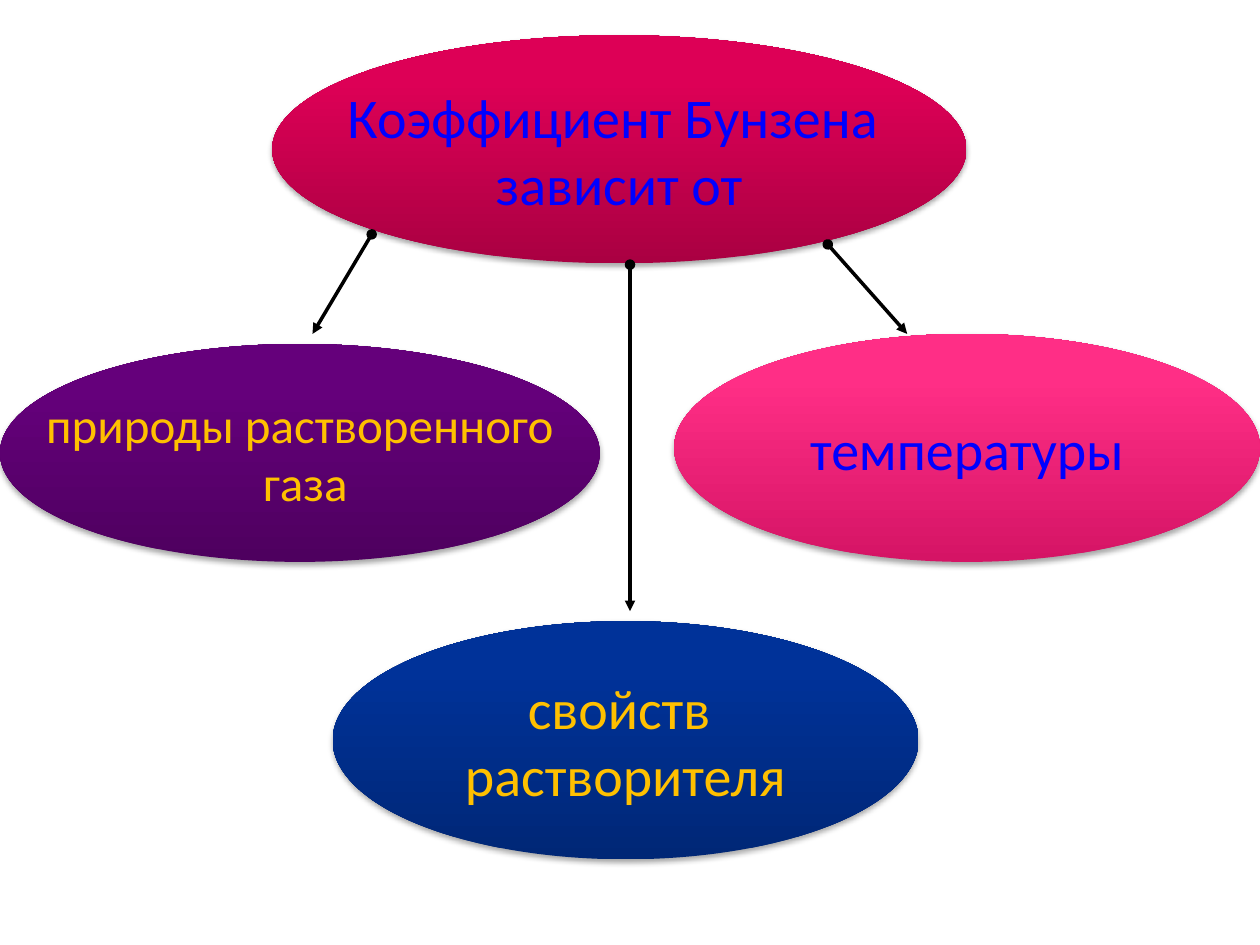
from lxml.etree import SubElement
from pptx import Presentation
from pptx.dml.color import RGBColor as Rgb
from pptx.enum.shapes import MSO_CONNECTOR as Connector, MSO_SHAPE as Shape
from pptx.enum.text import MSO_ANCHOR as Anchor, PP_ALIGN as Align
from pptx.oxml.ns import qn
from pptx.util import Inches, Pt

COLORS = {"blue": "0000FF", "gold": "FFC000", "black": "000000"}
GRADIENTS = {  # from bottom to top, at 0, 80 and 100 percent
    "crimson": ("AA0042", "DD0056", "DE0057"),
    "pink": ("D51465", "FF2E86", "FF3087"),
    "navy": ("002776", "003299", "00339A"),
    "purple": ("4E005F", "65007B", "65007C"),
}
STOPS = (0, 80, 100)

# box (left, top, width, height), gradient, text colour, text size, lines
ELLIPSES = [
    ((2.16, 0.28, 5.51, 1.81), "crimson", "blue", 32, ["Коэффициент Бунзена ", "зависит от"]),
    ((5.35, 2.65, 4.65, 1.81), "pink", "blue", 32, ["температуры"]),
    ((2.64, 4.93, 4.65, 1.89), "navy", "gold", 32, ["свойств ", "растворителя"]),
    ((0, 2.73, 4.76, 1.73), "purple", "gold", 28, ["природы растворенного", " газа"]),
]
ARROWS = [
    ((2.95, 1.86), (2.48, 2.65)),
    ((6.57, 1.94), (7.2, 2.65)),
    ((5, 2.1), (5, 4.85)),
]


def add_color(parent, color):
    return SubElement(parent, qn("a:srgbClr"), val=color)


def fill_gradient(shape, colors):
    shape.fill.gradient()
    shape.fill.gradient_angle = 90
    stops = shape._element.spPr.find(".//" + qn("a:gsLst"))
    for stop in list(stops):
        stops.remove(stop)
    for percent, color in zip(STOPS, colors):
        add_color(SubElement(stops, qn("a:gs"), pos=str(percent * 1000)), color)


def add_soft_shadow(shape):
    shape.shadow.inherit = False
    effects = shape._element.spPr.find(qn("a:effectLst"))
    shadow = SubElement(effects, qn("a:outerShdw"), blurRad=str(Pt(3.1)),
                        dist=str(Pt(1.8)), dir="5400000", rotWithShape="0")
    SubElement(add_color(shadow, COLORS["black"]), qn("a:alpha"), val="35000")


def add_ellipse(page, box, gradient, color, size, lines):
    ellipse = page.shapes.add_shape(Shape.OVAL, *map(Inches, box))
    fill_gradient(ellipse, GRADIENTS[gradient])
    ellipse.line.fill.background()
    add_soft_shadow(ellipse)
    frame = ellipse.text_frame
    frame.word_wrap = False
    frame.vertical_anchor = Anchor.MIDDLE
    frame.text = "\n".join(lines)
    for para in frame.paragraphs:
        para.alignment = Align.CENTER
        indent = Inches(0.38)
        properties = para._p.get_or_add_pPr()
        properties.set("marL", str(indent))
        properties.set("indent", str(-indent))
        for span in para.runs:
            span.font.name = "Calibri"
            span.font.size = Pt(size)
            span.font.color.rgb = Rgb.from_string(COLORS[color])


def add_arrow(page, start, end):
    arrow = page.shapes.add_connector(Connector.STRAIGHT, *map(Inches, start + end))
    arrow.line.width = Pt(2)
    arrow.line.color.rgb = Rgb.from_string(COLORS["black"])
    line = arrow.line._get_or_add_ln()
    SubElement(line, qn("a:headEnd"), type="oval")
    SubElement(line, qn("a:tailEnd"), type="triangle")
    SubElement(arrow._element.spPr, qn("a:effectLst"))


def main():
    deck = Presentation()
    deck.slide_width, deck.slide_height = Inches(10), Inches(7.5)
    page = deck.slides.add_slide(deck.slide_layouts[6])
    for ellipse in ELLIPSES:
        add_ellipse(page, *ellipse)
    for start, end in ARROWS:
        add_arrow(page, start, end)
    deck.save("out.pptx")


if __name__ == "__main__":
    main()
